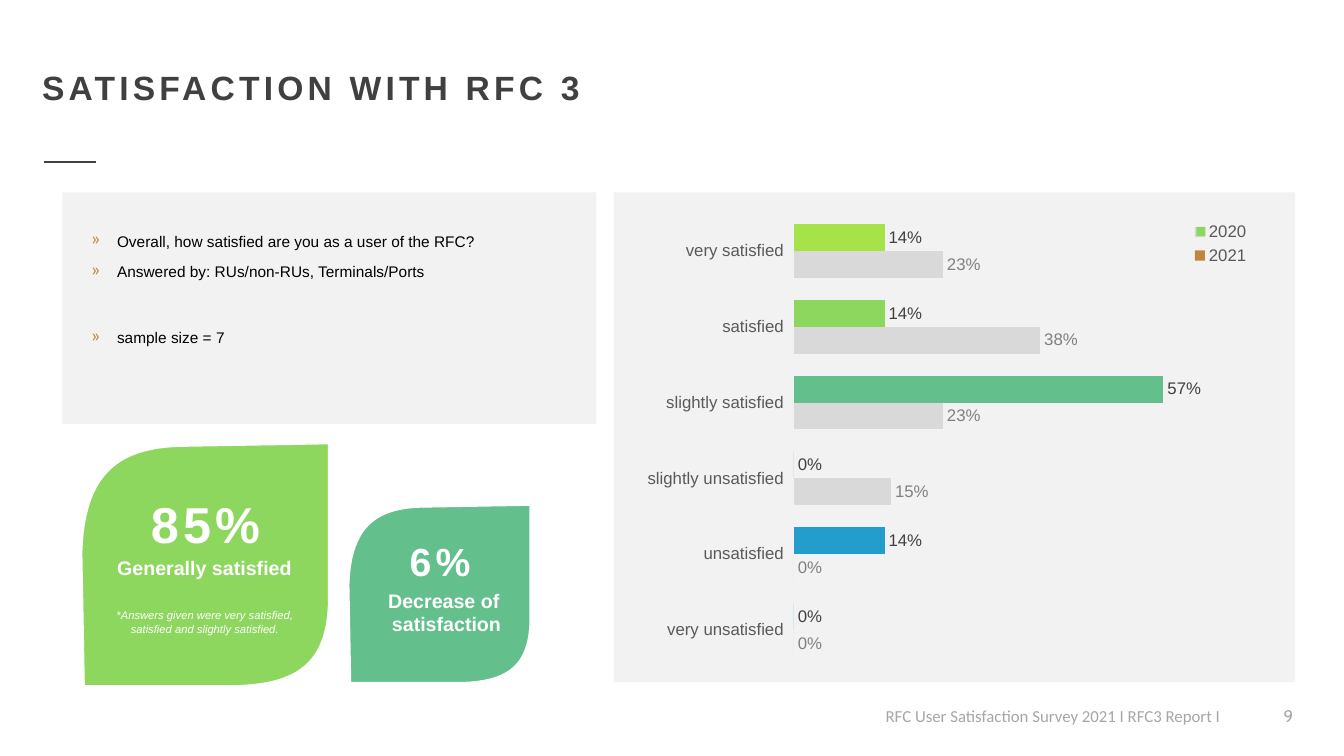
from dataclasses import dataclass

from lxml import etree
from pptx import Presentation
from pptx.chart.data import CategoryChartData
from pptx.dml.color import RGBColor
from pptx.enum.chart import XL_CHART_TYPE, XL_LABEL_POSITION, XL_LEGEND_POSITION
from pptx.enum.shapes import MSO_CONNECTOR, MSO_SHAPE
from pptx.enum.text import PP_ALIGN
from pptx.oxml import parse_xml
from pptx.oxml.ns import nsdecls, qn
from pptx.util import Cm, Pt

LEFT, CENTER, RIGHT = PP_ALIGN.LEFT, PP_ALIGN.CENTER, PP_ALIGN.RIGHT
RECTANGLE = MSO_SHAPE.RECTANGLE
STRAIGHT = MSO_CONNECTOR.STRAIGHT
BAR_CLUSTERED = XL_CHART_TYPE.BAR_CLUSTERED
OUTSIDE_END = XL_LABEL_POSITION.OUTSIDE_END
LEGEND_RIGHT = XL_LEGEND_POSITION.RIGHT


@dataclass(frozen=True)
class Theme:
    font: str = "Arial"
    footer_font: str = "Calibri"
    number_font: str = "Cabin"
    dark: str = "404040"
    black: str = "000000"
    white: str = "FFFFFF"
    panel: str = "F2F2F2"
    footer: str = "A6A6A6"
    axis: str = "595959"
    muted: str = "808080"
    accent: str = "BF873D"
    previous: str = "D9D9D9"
    light_green: str = "8DD75F"
    green: str = "63C08C"
    bars: tuple[str, ...] = ("A5E348", "8DD75F", "63C08C", "37A7B5", "239DCC", "00B0F0")
    title_size: float = 24
    body_size: float = 11
    caption_size: float = 14
    note_size: float = 8
    label_size: float = 12
    chart_size: float = 10


THEME = Theme()


@dataclass(frozen=True)
class Box:
    """Left, top, width and height in centimetres."""
    left: float
    top: float
    width: float
    height: float

    def lengths(self) -> tuple[Cm, Cm, Cm, Cm]:
        return Cm(self.left), Cm(self.top), Cm(self.width), Cm(self.height)


@dataclass(frozen=True)
class Leaf:
    box: Box
    color: str
    figure: str
    figure_box: Box
    figure_size: float
    caption: str
    caption_box: Box
    caption_wrap: bool


@dataclass(frozen=True)
class Answers:
    year: str
    values: tuple[float, ...]
    color: str
    label_color: str


PANELS = (Box(1.57, 4.85, 13.46, 5.84), Box(15.47, 4.85, 17.17, 12.34))
LEAVES = (
    Leaf(Box(2.06, 11.18, 6.22, 6.1), THEME.light_green, "85%", Box(3.48, 12.29, 3.4, 1.8), 36,
         "Generally satisfied", Box(2.69, 13.89, 4.93, 0.86), False),
    Leaf(Box(8.79, 12.73, 4.57, 4.47), THEME.green, "6%", Box(10.01, 13.41, 2.16, 1.45), 28,
         "Decrease of \nsatisfaction", Box(9.45, 14.71, 3.61, 1.45), True),
)
CATEGORIES = ("very satisfied", "satisfied", "slightly satisfied",
              "slightly unsatisfied", "unsatisfied", "very unsatisfied")
SURVEYS = (
    Answers("2021", (0.14, 0.14, 0.57, 0, 0.14, 0), THEME.accent, THEME.dark),
    Answers("2020", (0.23, 0.38, 0.23, 0.15, 0, 0), THEME.previous, THEME.muted),
)
# Leaf outline as fractions of its box: each curve has a start, two controls and an end
LEAF_CURVES = (
    ((0, 0.45), (0.01, 0.1), (0.17, 0.01), (0.43, 0.01)),
    ((1, 0.67), (0.99, 0.9), (0.88, 0.99), (0.64, 1)),
)
LEAF_TIPS = ((1, 0), (0.01, 1))
CURVE_STEPS = 24


def paint(fill, color: str) -> None:
    fill.solid()
    fill.fore_color.rgb = RGBColor.from_string(color)


def style_font(font, size: float, color: str, name: str = THEME.font) -> None:
    font.size, font.name = Pt(size), name
    font.color.rgb = RGBColor.from_string(color)


def add_bullet(paragraph) -> None:
    properties = paragraph._p.get_or_add_pPr()
    properties.set("marL", str(Cm(0.64)))
    properties.set("indent", str(-Cm(0.64)))
    color = etree.SubElement(properties, qn("a:buClr"))
    etree.SubElement(color, qn("a:srgbClr"), val=THEME.accent)
    etree.SubElement(properties, qn("a:buChar"), char="»")


def add_text(slide, box: Box, *lines: str, size: float, color: str, name: str = THEME.font,
             bold: bool = False, italic: bool = False, align=LEFT, tracking: int = 0,
             wrap: bool = True, bullet: bool = False) -> None:
    """Write one paragraph per line; tracking is in points."""
    frame = slide.shapes.add_textbox(*box.lengths()).text_frame
    frame.word_wrap = wrap
    for index, line in enumerate(lines):
        paragraph = frame.add_paragraph() if index else frame.paragraphs[0]
        paragraph.alignment = align
        for position, part in enumerate(line.split("\n")):
            if position:
                paragraph.add_line_break()
            run = paragraph.add_run()
            run.text = part
            style_font(run.font, size, color, name)
            run.font.bold, run.font.italic = bold, italic
            if tracking:
                run._r.get_or_add_rPr().set("spc", str(tracking * 100))
        if bullet:
            paragraph.line_spacing, paragraph.space_before = 0.9, Pt(10)
            add_bullet(paragraph)


def add_rectangle(slide, box: Box, color: str) -> None:
    shape = slide.shapes.add_shape(RECTANGLE, *box.lengths())
    shape.shadow.inherit = False
    paint(shape.fill, color)
    shape.line.fill.background()


def curve_points(curve) -> list[tuple[float, float]]:
    """Sample a cubic curve from its start to its end."""
    points = []
    for step in range(CURVE_STEPS + 1):
        t = step / CURVE_STEPS
        weights = ((1 - t) ** 3, 3 * t * (1 - t) ** 2, 3 * t ** 2 * (1 - t), t ** 3)
        points.append(tuple(sum(w * point[axis] for w, point in zip(weights, curve))
                            for axis in (0, 1)))
    return points


def add_leaf(slide, leaf: Leaf) -> None:
    outline = [point for curve, tip in zip(LEAF_CURVES, LEAF_TIPS)
               for point in (*curve_points(curve), tip)]
    box = leaf.box
    points = [(Cm(box.left + x * box.width), Cm(box.top + y * box.height)) for x, y in outline]
    builder = slide.shapes.build_freeform(*points[0])
    builder.add_line_segments(points[1:], close=True)
    shape = builder.convert_to_shape()
    shape.shadow.inherit = False
    paint(shape.fill, leaf.color)
    paint(shape.line.fill, THEME.white)
    shape.line.width = Pt(1)
    add_text(slide, leaf.figure_box, leaf.figure, size=leaf.figure_size, color=THEME.white,
             bold=True, align=CENTER, tracking=3, wrap=False)
    add_text(slide, leaf.caption_box, leaf.caption, size=THEME.caption_size, color=THEME.white,
             bold=True, align=CENTER, wrap=leaf.caption_wrap)


def manual_layout(x: float, y: float, width: float, height: float, inner: bool = False):
    """Build a layout element from fractions of the chart area."""
    target = '<c:layoutTarget val="inner"/>' if inner else ""
    return parse_xml(
        f'<c:layout {nsdecls("c")}><c:manualLayout>{target}<c:xMode val="edge"/>'
        f'<c:yMode val="edge"/><c:x val="{x}"/><c:y val="{y}"/><c:w val="{width}"/>'
        f'<c:h val="{height}"/></c:manualLayout></c:layout>')


def add_satisfaction_chart(slide) -> None:
    data = CategoryChartData(number_format="0%")
    data.categories = CATEGORIES
    for survey in SURVEYS:
        data.add_series(survey.year, survey.values)
    box = Box(16.05, 5.13, 15.82, 11.94)
    chart = slide.shapes.add_chart(BAR_CLUSTERED, *box.lengths(), data).chart
    chart.has_title = False
    style_font(chart.font, THEME.chart_size, THEME.black)

    plot = chart.plots[0]
    plot.gap_width, plot.overlap, plot.vary_by_categories = 83, 0, False
    for series, survey in zip(plot.series, SURVEYS):
        series.invert_if_negative = False
        paint(series.format.fill, survey.color)
        labels = series.data_labels
        labels.show_value, labels.position = True, OUTSIDE_END
        labels.number_format, labels.number_format_is_linked = "0%", False
        style_font(labels.font, THEME.label_size, survey.label_color)
    for index, color in enumerate(THEME.bars):
        paint(plot.series[0].points[index].format.fill, color)

    chart.category_axis.reverse_order = True
    chart.category_axis.format.line.fill.background()
    style_font(chart.category_axis.tick_labels.font, THEME.label_size, THEME.axis)
    values = chart.value_axis
    values.minimum_scale, values.maximum_scale = 0, 0.6
    values.has_major_gridlines = values.visible = False

    chart.has_legend = True
    legend = chart.legend
    legend.position, legend.include_in_layout = LEGEND_RIGHT, False
    style_font(legend.font, THEME.label_size, THEME.axis)
    legend._element.find(qn("c:legendPos")).addnext(manual_layout(0.88, 0.03, 0.1, 0.11))
    area = chart._chartSpace.chart.plotArea
    for layout in area.findall(qn("c:layout")):
        area.remove(layout)
    area.insert(0, manual_layout(0.25, 0.02, 0.62, 0.96, inner=True))


def main() -> None:
    presentation = Presentation()
    presentation.slide_width, presentation.slide_height = Cm(33.87), Cm(19.05)
    slide = presentation.slides.add_slide(presentation.slide_layouts[6])

    add_text(slide, Box(31.27, 17.65, 1.57, 1.02), "9", size=THEME.label_size,
             color=THEME.footer, name=THEME.number_font, align=RIGHT)
    add_text(slide, Box(22.07, 17.65, 9.45, 0.76),
             "RFC User Satisfaction Survey 2021 I RFC3 Report I", size=THEME.label_size,
             color=THEME.footer, name=THEME.footer_font, wrap=False)
    for panel in PANELS:
        add_rectangle(slide, panel, THEME.panel)
    rule = slide.shapes.add_connector(STRAIGHT, Cm(1.12), Cm(4.09), Cm(2.41), Cm(4.09))
    paint(rule.line.fill, THEME.dark)
    rule.line.width = Pt(1.5)
    etree.SubElement(rule._element.spPr, qn("a:effectLst"))
    add_text(slide, Box(0.81, 1.55, 21.44, 1.27), "SATISFACTION WITH RFC 3",
             size=THEME.title_size, color=THEME.dark, bold=True, tracking=3)
    add_text(slide, Box(2.06, 8.2, 5.77, 0.84), "sample size = 7",
             size=THEME.body_size, color=THEME.black, bullet=True)
    add_text(slide, Box(2.06, 5.77, 12.57, 2.08),
             "Overall, how satisfied are you as a user of the RFC?",
             "Answered by: RUs/non-RUs, Terminals/Ports",
             size=THEME.body_size, color=THEME.black, bullet=True)
    for leaf in LEAVES:
        add_leaf(slide, leaf)
    add_text(slide, Box(2.41, 15.21, 5.51, 0.94),
             "*Answers given were very satisfied, satisfied and slightly satisfied.",
             size=THEME.note_size, color=THEME.white, italic=True, align=CENTER)
    add_satisfaction_chart(slide)
    add_rectangle(slide, Box(30.15, 5.72, 0.23, 0.23), THEME.light_green)
    presentation.save("out.pptx")


if __name__ == "__main__":
    main()
